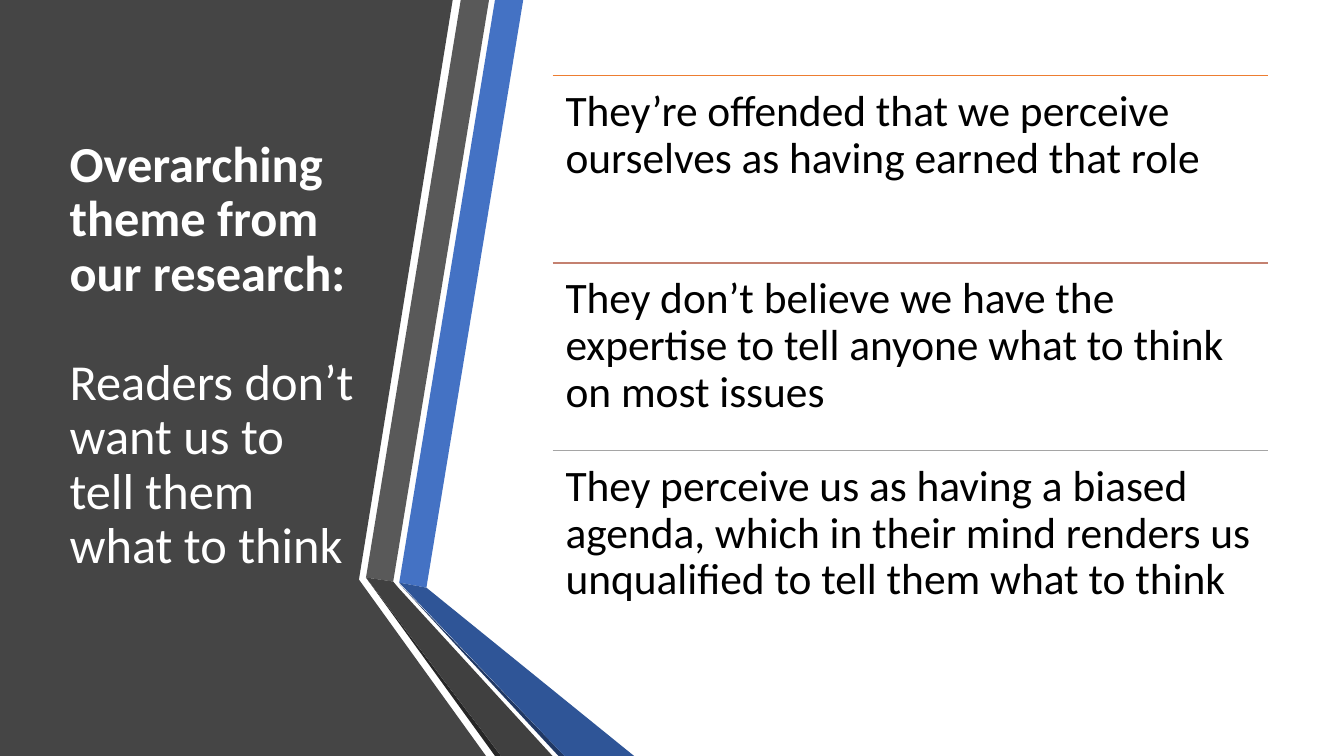
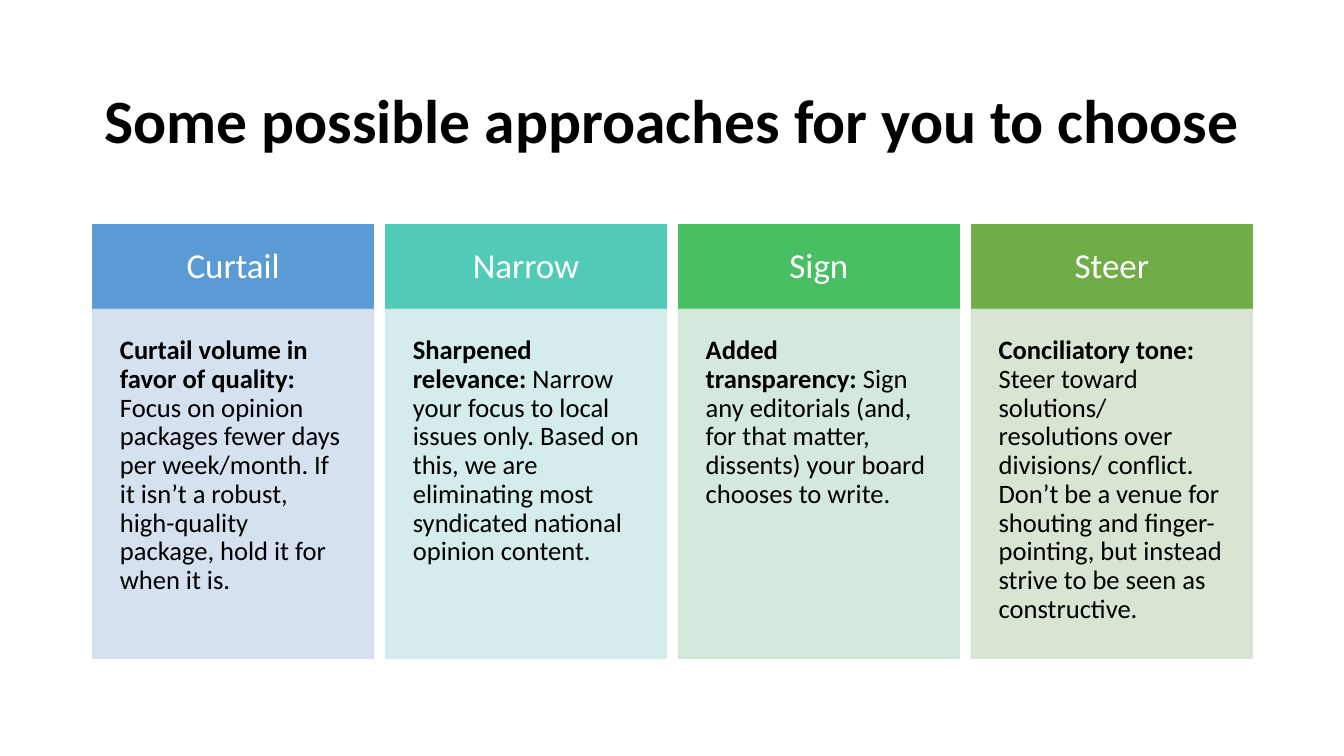
"""Build a two-slide deck on readers' views of editorials and possible responses."""
from lxml.etree import SubElement
from pptx import Presentation
from pptx.dml.color import RGBColor
from pptx.enum.shapes import MSO_CONNECTOR, MSO_SHAPE
from pptx.enum.text import MSO_ANCHOR, MSO_AUTO_SIZE, PP_ALIGN
from pptx.oxml.ns import qn
from pptx.util import Inches, Pt

WIDTH, HEIGHT = 13.33, 7.5
FONT = "Calibri"
WHITE = RGBColor(0xFF, 0xFF, 0xFF)
BLACK = RGBColor(0x00, 0x00, 0x00)
CHARCOAL = RGBColor(0x45, 0x45, 0x45)
BLUE = RGBColor(0x44, 0x72, 0xC4)
DEEP_BLUE = RGBColor(0x2F, 0x55, 0x97)
NAVY = RGBColor(0x20, 0x38, 0x64)
GRAY = RGBColor(0x59, 0x59, 0x59)
DARK_GRAY = RGBColor(0x40, 0x40, 0x40)
NEAR_BLACK = RGBColor(0x26, 0x26, 0x26)
ORANGE = RGBColor(0xED, 0x7D, 0x31)
ROSE = RGBColor(0xC4, 0x81, 0x70)
SILVER = RGBColor(0xA5, 0xA5, 0xA5)
SKY = RGBColor(0x5B, 0x9B, 0xD5)
TEAL = RGBColor(0x52, 0xCA, 0xB8)
GREEN = RGBColor(0x49, 0xBF, 0x64)
OLIVE = RGBColor(0x70, 0xAD, 0x47)
PALE_SKY = RGBColor(0xD2, 0xDE, 0xEF)
PALE_TEAL = RGBColor(0xD0, 0xEC, 0xEA)
PALE_GREEN = RGBColor(0xD0, 0xE7, 0xD8)
PALE_OLIVE = RGBColor(0xD5, 0xE3, 0xCF)

BODY_TOP, BODY_HEIGHT = 0.75, 5.58
REASON_LEFT, REASON_WIDTH = 5.48, 7.1
GRID_LEFT, GRID_WIDTH, GRID_GAP = 0.92, 11.5, 0.12
HEAD_TOP, HEAD_HEIGHT, CARD_HEIGHT = 2.23, 0.84, 3.46

RIBBONS = [
    (CHARCOAL, [(0, 0), (3.53, 0), (4.49, 0), (3.56, 5.75), (4.82, HEIGHT), (0, HEIGHT)]),
    (BLUE, [(3.96, 5.78), (4.23, 5.83), (5.19, 0), (4.91, 0)]),
    (GRAY, [(4.85, 0), (4.57, 0), (3.63, 5.73), (3.9, 5.77)]),
    (NEAR_BLACK, [(3.63, 5.73), (4.91, HEIGHT), (4.97, HEIGHT)]),
    (NAVY, [(3.96, 5.79), (5.54, HEIGHT), (5.6, HEIGHT)]),
    (DEEP_BLUE, [(3.96, 5.78), (5.6, HEIGHT), (6.29, HEIGHT), (4.23, 5.83)]),
    (DARK_GRAY, [(3.63, 5.73), (4.97, HEIGHT), (5.48, HEIGHT), (3.95, 5.83), (3.9, 5.77)]),
]
THEME = [
    [("Overarching theme from our research:", True)],
    [("Readers don’t want us to tell them what to think", False)],
]
REASONS = [
    (ORANGE, "They’re offended that we perceive ourselves as having earned that role"),
    (ROSE, "They don’t believe we have the expertise to tell anyone what to think on most issues"),
    (SILVER, "They perceive us as having a biased agenda, which in their mind renders us "
             "unqualified to tell them what to think"),
]
APPROACHES = [
    ("Curtail", SKY, PALE_SKY, "Curtail volume in favor of quality: ",
     "Focus on opinion packages fewer days per week/month. If it isn’t a robust, "
     "high-quality package, hold it for when it is."),
    ("Narrow", TEAL, PALE_TEAL, "Sharpened relevance: ",
     "Narrow your focus to local issues only. Based on this, we are eliminating most "
     "syndicated national opinion content."),
    ("Sign", GREEN, PALE_GREEN, "Added transparency: ",
     "Sign any editorials (and, for that matter, dissents) your board chooses to write."),
    ("Steer", OLIVE, PALE_OLIVE, "Conciliatory tone: ",
     "Steer toward solutions/ resolutions over divisions/ conflict. Don’t be a venue for "
     "shouting and finger-pointing, but instead strive to be seen as constructive."),
]


def write(frame, paragraphs, size, color, align=PP_ALIGN.LEFT, anchor=MSO_ANCHOR.TOP,
          inset=None, gap=0):
    """Fill a text frame with paragraphs made of (text, bold) runs."""
    frame.word_wrap = True
    frame.auto_size = MSO_AUTO_SIZE.NONE
    frame.vertical_anchor = anchor
    if inset is not None:
        frame.margin_left = frame.margin_right = Inches(inset)
        frame.margin_top = frame.margin_bottom = Inches(inset)
    for index, runs in enumerate(paragraphs):
        paragraph = frame.add_paragraph() if index else frame.paragraphs[0]
        paragraph.alignment = align
        paragraph.line_spacing = 0.9
        paragraph.space_before = Pt(gap if index else 0)
        for text, bold in runs:
            run = paragraph.add_run()
            run.text = text
            run.font.name, run.font.size, run.font.bold = FONT, Pt(size), bold
            run.font.color.rgb = color


def set_title(slide, box, paragraphs, size, color, align, gap=0):
    """Place and format the title placeholder in front of the other shapes."""
    title = slide.shapes.title
    title.left, title.top, title.width, title.height = map(Inches, box)
    write(title.text_frame, paragraphs, size, color, align, MSO_ANCHOR.MIDDLE, gap=gap)
    title.element.getparent().append(title.element)


def add_ribbon(slide, color, points):
    """Draw a filled polygon through points given in inches."""
    corners = [(Inches(x), Inches(y)) for x, y in points]
    builder = slide.shapes.build_freeform(*corners[0])
    builder.add_line_segments(corners[1:], close=True)
    ribbon = builder.convert_to_shape()
    ribbon.shadow.inherit = False
    ribbon.fill.solid()
    ribbon.fill.fore_color.rgb = color
    ribbon.line.fill.background()


def add_rule(slide, left, top, width, color):
    """Draw a thin horizontal line."""
    rule = slide.shapes.add_connector(
        MSO_CONNECTOR.STRAIGHT, Inches(left), Inches(top), Inches(left + width), Inches(top))
    rule.line.color.rgb = color
    rule.line.width = Pt(1)
    SubElement(rule.element.spPr, qn("a:effectLst"))


def add_reason(slide, row, color, text):
    """Add one ruled row of the reasons list."""
    height = BODY_HEIGHT / len(REASONS)
    top = BODY_TOP + row * height
    add_rule(slide, REASON_LEFT, top, REASON_WIDTH, color)
    reason = slide.shapes.add_textbox(*map(Inches, (REASON_LEFT, top, REASON_WIDTH, height)))
    write(reason.text_frame, [[(text, False)]], 31, BLACK, inset=0.13)


def add_panel(slide, box, color, opacity=100):
    """Add a rectangle with matching fill and outline and return its text frame."""
    panel = slide.shapes.add_shape(MSO_SHAPE.RECTANGLE, *map(Inches, box))
    panel.shadow.inherit = False
    panel.fill.solid()
    panel.fill.fore_color.rgb = color
    panel.line.color.rgb = color
    panel.line.width = Pt(1)
    if opacity < 100:
        for tint in panel.element.spPr.iter(qn("a:srgbClr")):
            SubElement(tint, qn("a:alpha"), val=str(opacity * 1000))
    return panel.text_frame


def add_approach(slide, column, heading, color, pale, lead, detail):
    """Add one column with a coloured heading above a pale card."""
    count = len(APPROACHES)
    width = (GRID_WIDTH - GRID_GAP * (count - 1)) / count
    left = GRID_LEFT + column * (width + GRID_GAP)
    head = add_panel(slide, (left, HEAD_TOP, width, HEAD_HEIGHT), color)
    write(head, [[(heading, False)]], 25, WHITE, PP_ALIGN.CENTER, MSO_ANCHOR.MIDDLE, 0.22)
    card = add_panel(slide, (left, HEAD_TOP + HEAD_HEIGHT, width, CARD_HEIGHT), pale, 90)
    write(card, [[(lead, True), (detail, False)]], 19, BLACK, inset=0.27)


def build_theme_slide(slide):
    """Build the slide with the research theme and its reasons."""
    for color, points in RIBBONS:
        add_ribbon(slide, color, points)
    set_title(slide, (0.59, BODY_TOP, 3.04, BODY_HEIGHT), THEME, 36, WHITE,
              PP_ALIGN.LEFT, gap=39)
    for row, (color, text) in enumerate(REASONS):
        add_reason(slide, row, color, text)


def build_approaches_slide(slide):
    """Build the slide with the four approaches."""
    set_title(slide, (GRID_LEFT, 0.61, GRID_WIDTH, 1.24),
              [[("Some possible approaches for you to choose", True)]], 44, BLACK,
              PP_ALIGN.CENTER)
    for column, approach in enumerate(APPROACHES):
        add_approach(slide, column, *approach)


def main():
    """Create and save the deck."""
    deck = Presentation()
    deck.slide_width, deck.slide_height = Inches(WIDTH), Inches(HEIGHT)
    title_only = deck.slide_layouts[5]
    for build in (build_theme_slide, build_approaches_slide):
        build(deck.slides.add_slide(title_only))
    deck.save("out.pptx")


if __name__ == "__main__":
    main()
